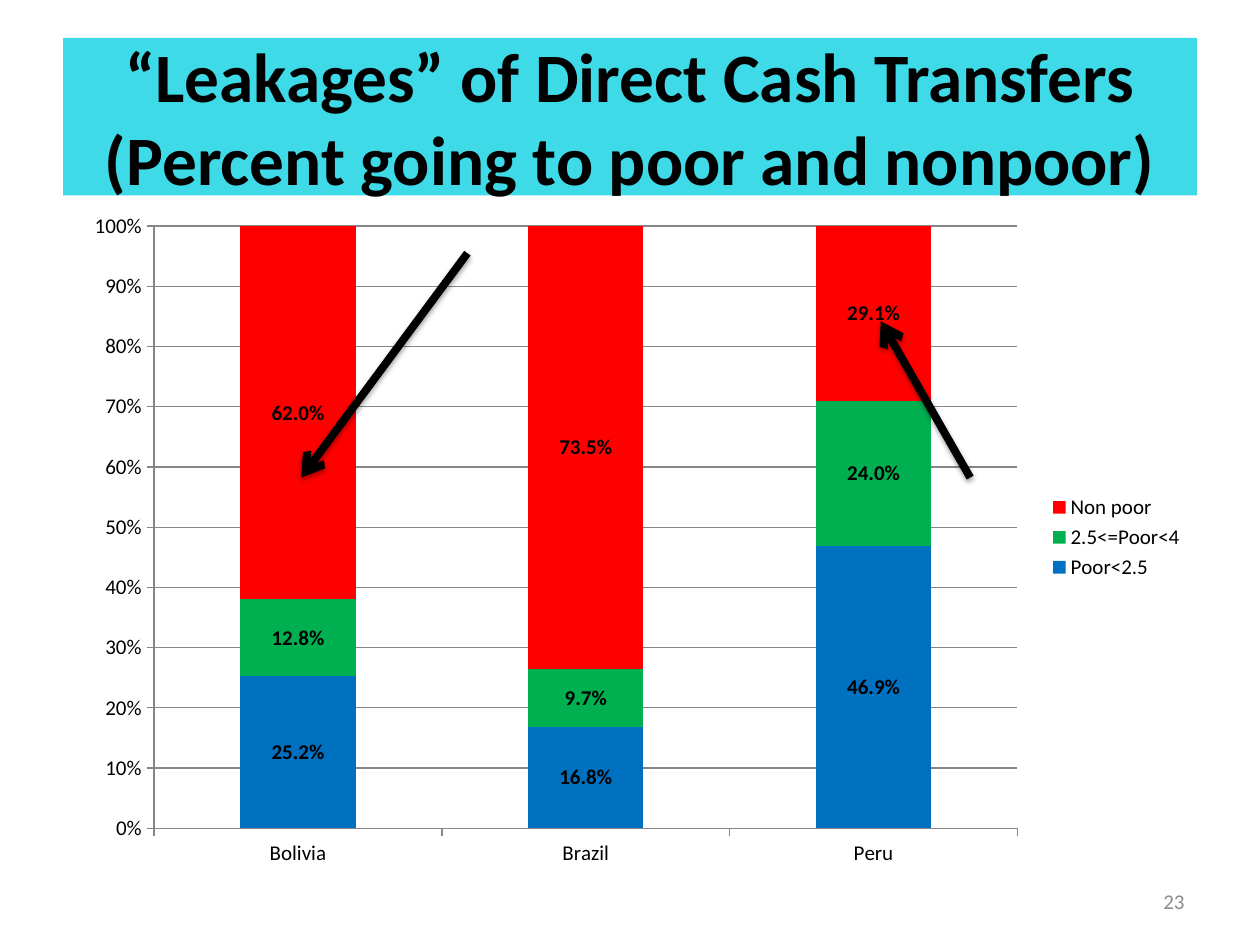
import pptx
import pptx.chart.data
import pptx.dml.color
import pptx.enum.chart
import pptx.enum.shapes
import pptx.enum.text
import pptx.oxml
import pptx.oxml.ns
import pptx.util

Pt = pptx.util.Pt
FONT = "Calibri"
COLORS = {
    "banner": "3EDAE7",
    "text": "000000",
    "number": "8C8C8C",
    "grid": "868686",
    "Poor<2.5": "0070C0",
    "2.5<=Poor<4": "00B050",
    "Non poor": "FF0000",
}
COUNTRIES = ["Bolivia", "Brazil", "Peru"]
SHARES = {
    "Poor<2.5": [0.252, 0.168, 0.469],
    "2.5<=Poor<4": [0.128, 0.097, 0.24],
    "Non poor": [0.62, 0.735, 0.291],
}
ARROWS = [((554.4, 272.9), (503.3, 183.6)), ((267.1, 144.7), (172.1, 272.9))]
PLOT = {"x": 0.07, "y": 0.04, "w": 0.77, "h": 0.89}


def rgb(name):
    return pptx.dml.color.RGBColor.from_string(COLORS[name])


def set_font(font, size, color="text", bold=False):
    font.name = FONT
    font.size = Pt(size)
    font.bold = bold
    font.color.rgb = rgb(color)


def place_title(s, box, text):
    sp = s.shapes.title
    sp.left, sp.top, sp.width, sp.height = map(Pt, box)
    sp.fill.solid()
    sp.fill.fore_color.rgb = rgb("banner")
    tf = sp.text_frame
    tf.text = text
    tf.word_wrap = True
    tf.auto_size = pptx.enum.text.MSO_AUTO_SIZE.NONE
    tf.vertical_anchor = pptx.enum.text.MSO_ANCHOR.MIDDLE
    p = tf.paragraphs[0]
    p.alignment = pptx.enum.text.PP_ALIGN.CENTER
    set_font(p.font, 39.6, bold=True)


def place_number(s, box, text):
    tf = s.shapes.add_textbox(*map(Pt, box)).text_frame
    tf.word_wrap = True
    tf.vertical_anchor = pptx.enum.text.MSO_ANCHOR.MIDDLE
    p = tf.paragraphs[0]
    p.text = text
    p.alignment = pptx.enum.text.PP_ALIGN.RIGHT
    set_font(p.font, 12, "number")


def fix_plot_area(chart):
    area = chart._chartSpace.chart.plotArea
    for old in area.findall(pptx.oxml.ns.qn("c:layout")):
        area.remove(old)
    modes = "".join(f'<c:{k}Mode val="edge"/>' for k in "xy")
    sizes = "".join(f'<c:{k} val="{v}"/>' for k, v in PLOT.items())
    area.insert(0, pptx.oxml.parse_xml(
        f'<c:layout {pptx.oxml.ns.nsdecls("c")}><c:manualLayout>'
        f'<c:layoutTarget val="inner"/>{modes}{sizes}'
        '</c:manualLayout></c:layout>'))


def place_chart(s, box):
    data = pptx.chart.data.CategoryChartData(number_format="0.0%")
    data.categories = COUNTRIES
    for name, values in SHARES.items():
        data.add_series(name, values)
    kind = pptx.enum.chart.XL_CHART_TYPE.COLUMN_STACKED_100
    chart = s.shapes.add_chart(kind, *map(Pt, box), data).chart
    set_font(chart.font, 12)
    chart.has_title = False
    chart.has_legend = True
    chart.legend.position = pptx.enum.chart.XL_LEGEND_POSITION.RIGHT
    chart.legend.include_in_layout = False
    set_font(chart.legend.font, 12)

    for axis in (chart.category_axis, chart.value_axis):
        axis.major_tick_mark = pptx.enum.chart.XL_TICK_MARK.OUTSIDE
        axis.minor_tick_mark = pptx.enum.chart.XL_TICK_MARK.NONE
        axis.format.line.color.rgb = rgb("grid")
        set_font(axis.tick_labels.font, 12)
    axis = chart.value_axis
    axis.minimum_scale, axis.maximum_scale, axis.major_unit = 0, 1, 0.1
    axis.has_major_gridlines = True
    axis.major_gridlines.format.line.color.rgb = rgb("grid")
    axis.tick_labels.number_format = "0%"
    axis.tick_labels.number_format_is_linked = False

    plot = chart.plots[0]
    plot.gap_width, plot.overlap = 150, 100
    plot.vary_by_categories = False
    for series in plot.series:
        series.format.fill.solid()
        series.format.fill.fore_color.rgb = rgb(series.name)
        labels = series.data_labels
        labels.show_value = True
        labels.number_format = "0.0%"
        labels.number_format_is_linked = False
        set_font(labels.font, 12, bold=True)
    fix_plot_area(chart)


def place_arrow(s, start, end):
    straight = pptx.enum.shapes.MSO_CONNECTOR.STRAIGHT
    c = s.shapes.add_connector(straight, *map(Pt, start + end))
    c.line.color.rgb = rgb("text")
    c.line.width = Pt(4.5)
    ns = pptx.oxml.ns.nsdecls("a")
    c.line._get_or_add_ln().append(
        pptx.oxml.parse_xml(f'<a:tailEnd {ns} type="arrow"/>'))
    c._element.spPr.append(pptx.oxml.parse_xml(
        f'<a:effectLst {ns}><a:outerShdw blurRad="{Pt(3.1)}" dist="{Pt(1.6)}" '
        f'dir="5400000" rotWithShape="0"><a:srgbClr val="{COLORS["text"]}">'
        '<a:alpha val="38000"/></a:srgbClr></a:outerShdw></a:effectLst>'))


def main():
    prs = pptx.Presentation()
    prs.slide_width, prs.slide_height = Pt(720), Pt(540)
    s = prs.slides.add_slide(prs.slide_layouts[5])
    place_title(s, (36, 21.6, 648, 90),
                "“Leakages” of Direct Cash Transfers\v"
                "(Percent going to poor and nonpoor)")
    place_number(s, (516, 500.5, 168, 28.75), "23")
    place_chart(s, (43.2, 113.75, 640.8, 386.65))
    for start, end in ARROWS:
        place_arrow(s, start, end)
    prs.save("out.pptx")


if __name__ == "__main__":
    main()
